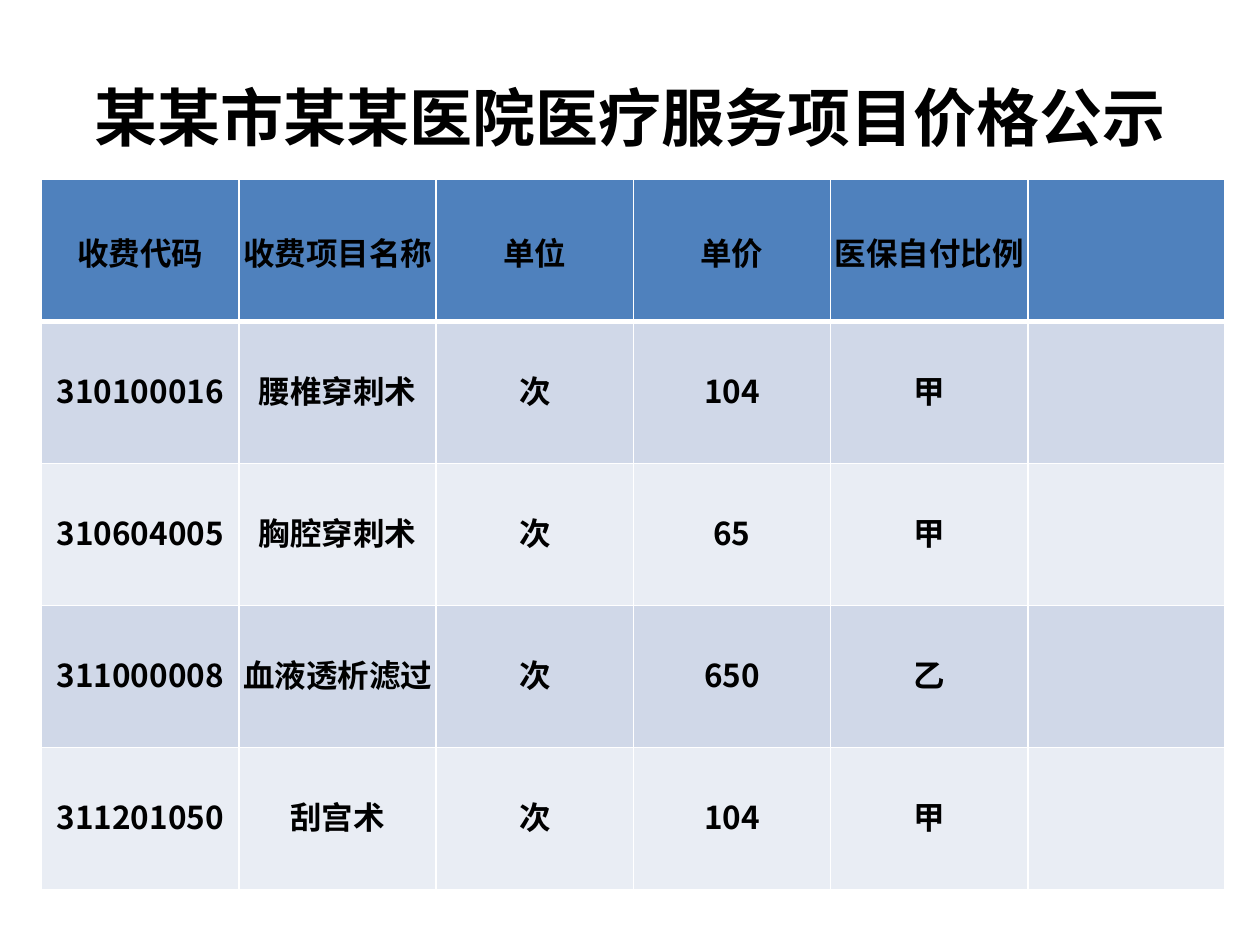
from lxml.etree import SubElement
from pptx import Presentation
from pptx.dml.color import RGBColor as RGB
from pptx.enum.text import MSO_ANCHOR as ANCHOR, PP_ALIGN as ALIGN
from pptx.oxml import parse_xml
from pptx.oxml.ns import nsdecls, qn
from pptx.util import Cm, Pt

# Content
TITLE = "某某市某某医院医疗服务项目价格公示"
ROWS = [
    ("收费代码", "收费项目名称", "单位", "单价", "医保自付比例", ""),
    ("310100016", "腰椎穿刺术", "次", "104", "甲", ""),
    ("310604005", "胸腔穿刺术", "次", "65", "甲", ""),
    ("311000008", "血液透析滤过", "次", "650", "乙", ""),
    ("311201050", "刮宫术", "次", "104", "甲", ""),
]
HEADER, BANDS = "4F81BD", ("E9EDF4", "D0D8E8")
CJK = "Noto Sans CJK SC"
TABLE_W, TABLE_H = 23.86, 14.31


def color(value):
    return RGB.from_string(value)


def write(tf, text, size=18, font=CJK, fill="000000", bold=True):
    p = tf.paragraphs[0]
    p.alignment = ALIGN.CENTER
    r = p.add_run()
    r.text = text
    r.font.size, r.font.name, r.font.bold = Pt(size), font, bold
    r.font.color.rgb = color(fill)
    SubElement(r.font._element, qn("a:ea"), typeface=CJK)


def add_borders(cell, **widths):
    tc_pr = cell._tc.get_or_add_tcPr()
    for i, (side, width) in enumerate(widths.items()):
        tc_pr.insert(i, parse_xml(
            f'<a:ln{side} {nsdecls("a")} w="{Pt(width)}"><a:solidFill>'
            f'<a:srgbClr val="FFFFFF"/></a:solidFill></a:ln{side}>'))


prs = Presentation()
prs.slide_width, prs.slide_height = Cm(25.4), Cm(19.05)
s = prs.slides.add_slide(prs.slide_layouts[6])

# Title
tf = s.shapes.add_textbox(Cm(1.27), Cm(0.76), Cm(22.86), Cm(3.18)).text_frame
tf.word_wrap = True
tf.vertical_anchor = ANCHOR.MIDDLE
write(tf, TITLE, size=36, font="Calibri")

# Price table: add_table shares the size evenly among columns and rows
table = s.shapes.add_table(len(ROWS), len(ROWS[0]), Cm(0.84), Cm(3.62),
                           Cm(TABLE_W), Cm(TABLE_H)).table
for i, values in enumerate(ROWS):
    for j, value in enumerate(values):
        cell = table.cell(i, j)
        cell.fill.solid()
        cell.fill.fore_color.rgb = color(BANDS[i % 2] if i else HEADER)
        cell.vertical_anchor = ANCHOR.MIDDLE
        cell.margin_left = cell.margin_right = cell.margin_top = Cm(0.03)
        cell.margin_bottom = Cm(0.13 if i else 0)
        add_borders(cell, L=1, R=1, T=3 if i == 1 else 1, B=1 if i else 3)
        if value:
            write(cell.text_frame, value)

prs.save("out.pptx")
